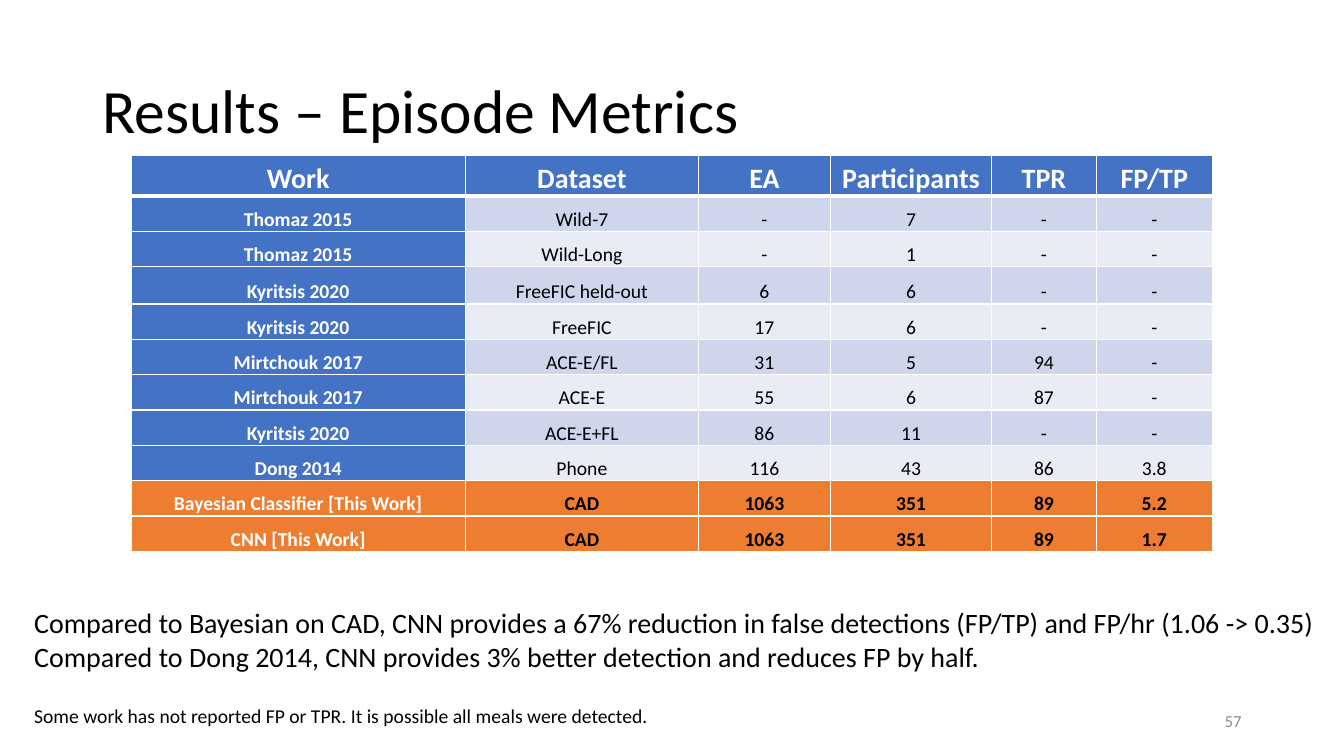
from lxml.etree import SubElement
from pptx import Presentation
from pptx.dml.color import RGBColor
from pptx.enum.text import MSO_ANCHOR, PP_ALIGN
from pptx.oxml.ns import qn
from pptx.util import Cm, Pt

TITLE = "Results – Episode Metrics"
PAGE_NUMBER = "57"
HEADINGS = ("Work", "Dataset", "EA", "Participants", "TPR", "FP/TP")
PRIOR_WORKS = [
    ("Thomaz 2015", "Wild-7", "-", "7", "-", "-"),
    ("Thomaz 2015", "Wild-Long", "-", "1", "-", "-"),
    ("Kyritsis 2020", "FreeFIC held-out", "6", "6", "-", "-"),
    ("Kyritsis 2020", "FreeFIC", "17", "6", "-", "-"),
    ("Mirtchouk 2017", "ACE-E/FL", "31", "5", "94", "-"),
    ("Mirtchouk 2017", "ACE-E", "55", "6", "87", "-"),
    ("Kyritsis 2020", "ACE-E+FL", "86", "11", "-", "-"),
    ("Dong 2014", "Phone", "116", "43", "86", "3.8"),
]
THIS_WORK = [
    ("Bayesian Classifier [This Work]", "CAD", "1063", "351", "89", "5.2"),
    ("CNN [This Work]", "CAD", "1063", "351", "89", "1.7"),
]
FINDINGS = [
    ("Compared to Bayesian on CAD, CNN provides a 67% reduction in false "
     "detections (FP/TP) and FP/hr (1.06 -> 0.35)", 20, 0),
    ("Compared to Dong 2014, CNN provides 3% better detection and reduces FP by half.", 20, 0),
    ("Some work has not reported FP or TPR. It is possible all meals were detected.", 14, 22),
]
COLORS = {
    "text": "000000", "white": "FFFFFF", "page": "8C8C8C", "blue": "4472C4",
    "odd": "CFD5EA", "even": "E9EBF5", "orange": "ED7D31",
}
COLUMN_WIDTHS = (8.43, 5.87, 3.33, 4.06, 2.64, 2.92)
HEADING_HEIGHT, ROW_HEIGHT, TALL_HEIGHT, TALL_ROW = 1.02, 0.89, 0.94, 3


def color(key):
    return RGBColor.from_string(COLORS[key])


def style(paragraph, size, color_key, bold=False):
    font = paragraph.font
    font.name, font.size, font.bold = "Calibri", Pt(size), bold
    font.color.rgb = color(color_key)


def add_text(slide, box, lines, color_key="text", align=PP_ALIGN.LEFT,
             anchor=MSO_ANCHOR.TOP, wrap=True, spacing=None):
    frame = slide.shapes.add_textbox(*map(Cm, box)).text_frame
    frame.word_wrap, frame.vertical_anchor = wrap, anchor
    for index, (text, size, before) in enumerate(lines):
        paragraph = frame.add_paragraph() if index else frame.paragraphs[0]
        paragraph.text, paragraph.alignment = text, align
        paragraph.line_spacing = spacing
        if before:
            paragraph.space_before = Pt(before)
        style(paragraph, size, color_key)


def add_borders(cell, row):
    widths = {"L": 1, "R": 1, "T": 3 if row == 1 else 1, "B": 3 if row == 0 else 1}
    properties = cell._tc.get_or_add_tcPr()
    for side, width in widths.items():
        line = SubElement(properties, qn(f"a:ln{side}"), w=str(Pt(width)))
        SubElement(SubElement(line, qn("a:solidFill")), qn("a:srgbClr"), val=COLORS["white"])


def cell_fill(row, column):
    if row > len(PRIOR_WORKS):
        return "orange"
    if row == 0 or column == 0:
        return "blue"
    return "odd" if row % 2 else "even"


def add_metrics(slide):
    rows = [HEADINGS, *PRIOR_WORKS, *THIS_WORK]
    heights = [HEADING_HEIGHT] + [ROW_HEIGHT] * (len(rows) - 1)
    heights[TALL_ROW] = TALL_HEIGHT
    metrics = slide.shapes.add_table(
        len(rows), len(HEADINGS), Cm(3.3), Cm(3.92),
        Cm(sum(COLUMN_WIDTHS)), Cm(sum(heights))).table
    for column, width in zip(metrics.columns, COLUMN_WIDTHS):
        column.width = Cm(width)
    for r, values in enumerate(rows):
        metrics.rows[r].height = Cm(heights[r])
        for c, value in enumerate(values):
            cell = metrics.cell(r, c)
            cell.vertical_anchor = MSO_ANCHOR.BOTTOM
            cell.margin_left = cell.margin_right = Cm(0.18)
            cell.margin_top = cell.margin_bottom = 0
            add_borders(cell, r)
            fill = cell_fill(r, c)
            cell.fill.solid()
            cell.fill.fore_color.rgb = color(fill)
            paragraph = cell.text_frame.paragraphs[0]
            paragraph.text, paragraph.alignment = value, PP_ALIGN.CENTER
            paragraph.line_spacing = 1.07
            style(paragraph, 14 if r else 20, "white" if r == 0 or c == 0 else "text",
                  fill in ("blue", "orange"))


def main():
    deck = Presentation()
    deck.slide_width, deck.slide_height = Cm(33.87), Cm(19.05)
    slide = deck.slides.add_slide(deck.slide_layouts[6])
    add_text(slide, (2.33, 1.01, 29.21, 3.68), [(TITLE, 44, 0)],
             anchor=MSO_ANCHOR.MIDDLE, spacing=0.9)
    add_text(slide, (23.92, 17.66, 7.62, 1.01), [(PAGE_NUMBER, 12, 0)], "page",
             PP_ALIGN.RIGHT, MSO_ANCHOR.MIDDLE)
    add_metrics(slide)
    add_text(slide, (0.61, 15.14, 33.07, 3.33), FINDINGS, wrap=False)
    deck.save("out.pptx")


if __name__ == "__main__":
    main()
